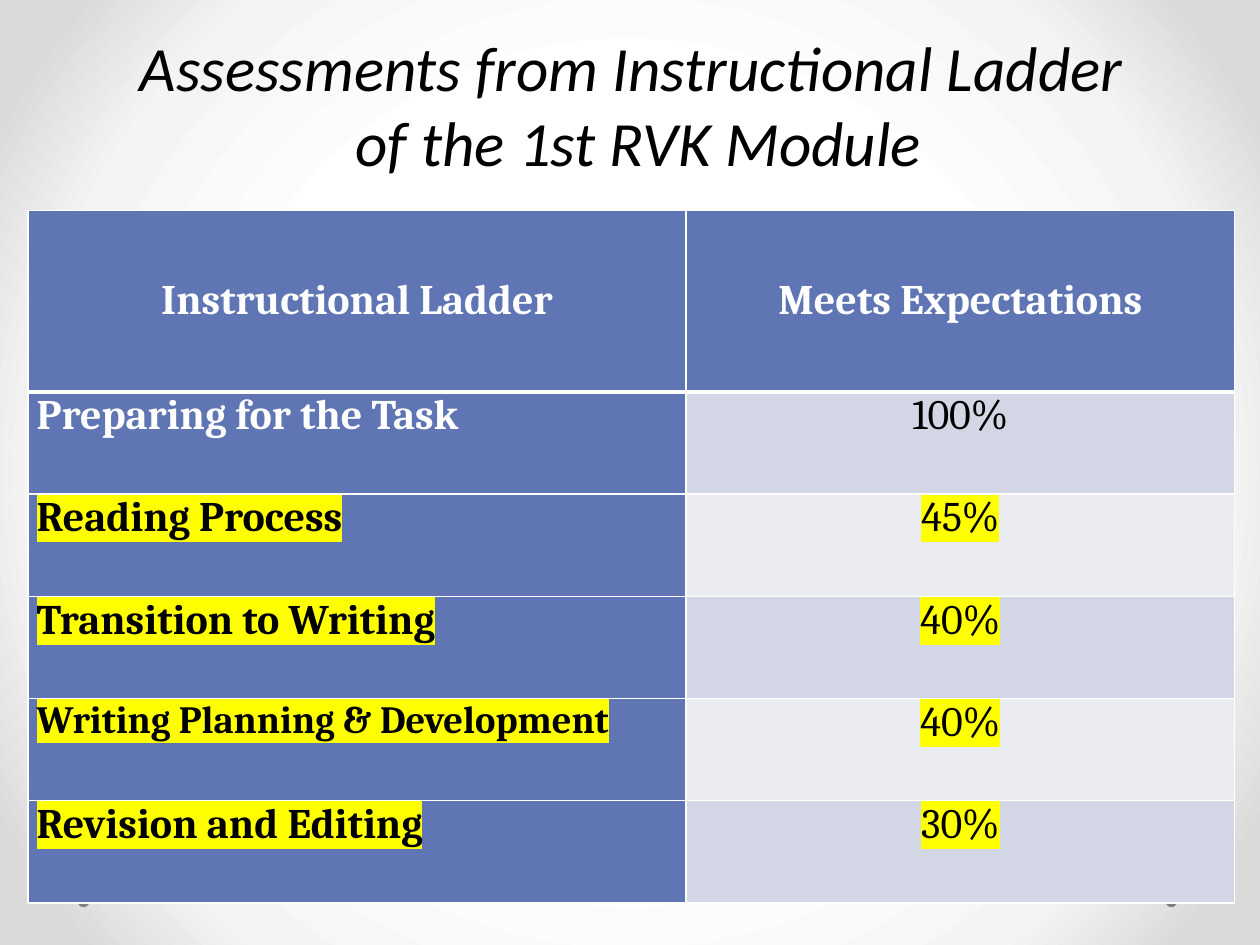
from dataclasses import dataclass

from lxml import etree
from pptx import Presentation
from pptx import util as u
from pptx.dml.color import RGBColor
from pptx.enum import shapes, text
from pptx.oxml import parse_xml
from pptx.oxml.ns import nsdecls, qn


@dataclass(frozen=True)
class Theme:
    title_font: str = "Calibri"
    table_font: str = "Cambria"
    title_size: int = 36
    cell_size: int = 24
    long_label_size: int = 22
    ink: str = "000000"
    paper: str = "FFFFFF"
    label_fill: str = "6076B4"
    bands: tuple = ("D2D6E5", "EAECF2")
    highlight: str = "FFFF00"
    dot: str = "808080"
    backdrop: tuple = ((50, "FFFFFF"), (76, "F4F4F4"), (92, "DADADA"))
    thin: int = 1
    thick: int = 3


@dataclass(frozen=True)
class Step:
    label: str
    score: str
    flagged: bool = True
    label_size: int = Theme.cell_size


THEME = Theme()
LEFT, WIDTH = 0.56, 24.33
TITLE_LINES = ("Assessments from Instructional Ladder", " of the 1st RVK Module")
HEADINGS = ("Instructional Ladder", "Meets Expectations")
STEPS = (
    Step("Preparing for the Task", "100%", flagged=False),
    Step("Reading Process", "45%"),
    Step("Transition to Writing", "40%"),
    Step("Writing Planning & Development", "40%", label_size=THEME.long_label_size),
    Step("Revision and Editing", "30%"),
)


def paint_backdrop(slide) -> None:
    stops = "".join(
        f'<a:gs pos="{position * 1000}"><a:srgbClr val="{color}"/></a:gs>'
        for position, color in THEME.backdrop
    )
    backdrop = parse_xml(
        f'<p:bg {nsdecls("p", "a")}><p:bgPr><a:gradFill rotWithShape="1">'
        f'<a:gsLst>{stops}</a:gsLst><a:path path="circle">'
        '<a:fillToRect l="50000" t="50000" r="50000" b="50000"/></a:path>'
        "</a:gradFill><a:effectLst/></p:bgPr></p:bg>"
    )
    slide.element.cSld.insert(0, backdrop)


def add_dot(slide, left: float) -> None:
    size = u.Cm(0.23)
    dot = slide.shapes.add_shape(
        shapes.MSO_SHAPE.OVAL, u.Cm(left), u.Cm(18.06), size, size
    )
    dot.shadow.inherit = False
    dot.fill.solid()
    dot.fill.fore_color.rgb = RGBColor.from_string(THEME.dot)
    dot.line.fill.background()


def add_run(paragraph, wording: str, font: str, size: int, color: str,
            bold: bool = False, italic: bool = False, flagged: bool = False) -> None:
    run = paragraph.add_run()
    run.text = wording
    run.font.size = u.Pt(size)
    run.font.bold = bold
    run.font.italic = italic
    run.font.color.rgb = RGBColor.from_string(color)
    run.font.name = font
    if flagged:
        marker = etree.Element(qn("a:highlight"))
        etree.SubElement(marker, qn("a:srgbClr"), val=THEME.highlight)
        run.font._element.find(qn("a:solidFill")).addnext(marker)


def add_title(slide) -> None:
    title = slide.shapes.add_textbox(u.Cm(LEFT), u.Cm(0.43), u.Cm(WIDTH), u.Cm(3.33))
    frame = title.text_frame
    frame.word_wrap = True
    frame.vertical_anchor = text.MSO_ANCHOR.MIDDLE
    for index, line in enumerate(TITLE_LINES):
        paragraph = frame.add_paragraph() if index else frame.paragraphs[0]
        paragraph.alignment = text.PP_ALIGN.CENTER
        add_run(paragraph, line, THEME.title_font, THEME.title_size, THEME.ink, italic=True)


def draw_borders(cell, top: int, bottom: int) -> None:
    sides = {"L": THEME.thin, "R": THEME.thin, "T": top, "B": bottom}
    for index, (side, weight) in enumerate(sides.items()):
        border = parse_xml(
            f'<a:ln{side} {nsdecls("a")} w="{u.Pt(weight)}"><a:solidFill>'
            f'<a:srgbClr val="{THEME.paper}"/></a:solidFill></a:ln{side}>'
        )
        cell._tc.get_or_add_tcPr().insert(index, border)


def fill_cell(cell, wording: str, fill: str, color: str, centered: bool = True,
              bold: bool = True, flagged: bool = False, size: int = THEME.cell_size,
              top: int = THEME.thin, bottom: int = THEME.thin) -> None:
    cell.margin_left = cell.margin_right = u.Cm(0.18)
    cell.margin_top = cell.margin_bottom = 0
    cell.fill.solid()
    cell.fill.fore_color.rgb = RGBColor.from_string(fill)
    draw_borders(cell, top, bottom)
    paragraph = cell.text_frame.paragraphs[0]
    paragraph.alignment = text.PP_ALIGN.CENTER if centered else text.PP_ALIGN.LEFT
    add_run(paragraph, wording, THEME.table_font, size, color, bold=bold, flagged=flagged)


def add_assessments(slide) -> None:
    heading_height, step_height = 3.66, 2.06
    height = heading_height + step_height * len(STEPS)
    ladder = slide.shapes.add_table(
        len(STEPS) + 1, len(HEADINGS), u.Cm(LEFT), u.Cm(4.24), u.Cm(WIDTH), u.Cm(height)
    ).table
    label_width = 13.27
    for column, width in zip(ladder.columns, (label_width, WIDTH - label_width)):
        column.width = u.Cm(width)
    for index, row in enumerate(ladder.rows):
        row.height = u.Cm(step_height if index else heading_height)

    for column, heading in enumerate(HEADINGS):
        cell = ladder.cell(0, column)
        cell.vertical_anchor = text.MSO_ANCHOR.MIDDLE
        fill_cell(cell, heading, THEME.label_fill, THEME.paper, bottom=THEME.thick)

    for index, step in enumerate(STEPS):
        top = THEME.thin if index else THEME.thick
        label_color = THEME.ink if step.flagged else THEME.paper
        fill_cell(ladder.cell(index + 1, 0), step.label, THEME.label_fill, label_color,
                  centered=False, flagged=step.flagged, size=step.label_size, top=top)
        fill_cell(ladder.cell(index + 1, 1), step.score, THEME.bands[index % 2],
                  THEME.ink, bold=False, flagged=step.flagged, top=top)


def main() -> None:
    deck = Presentation()
    deck.slide_width, deck.slide_height = u.Cm(25.4), u.Cm(19.05)
    slide = deck.slides.add_slide(deck.slide_layouts[6])
    paint_backdrop(slide)
    for left in (23.5, 1.57):
        add_dot(slide, left)
    add_assessments(slide)
    add_title(slide)
    deck.save("out.pptx")


if __name__ == "__main__":
    main()
